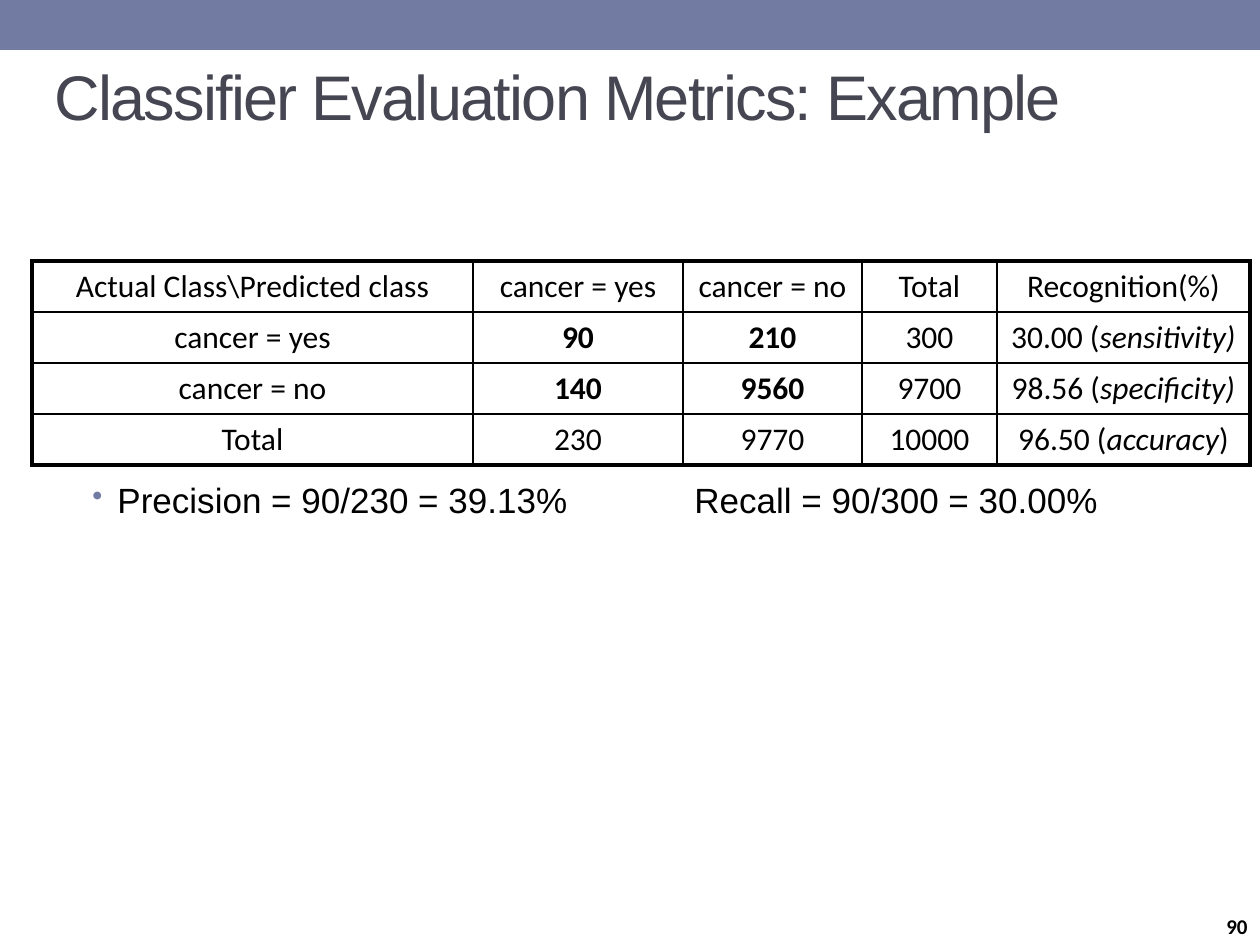
"""Build the classifier evaluation metrics slide with its confusion matrix."""
from lxml import etree
from pptx import Presentation
from pptx.dml.color import RGBColor
from pptx.enum.shapes import MSO_SHAPE
from pptx.enum.text import MSO_ANCHOR, PP_ALIGN
from pptx.oxml.ns import qn
from pptx.util import Pt

RECT = MSO_SHAPE.RECTANGLE
TOP, MIDDLE, BOTTOM = MSO_ANCHOR.TOP, MSO_ANCHOR.MIDDLE, MSO_ANCHOR.BOTTOM
LEFT, CENTER, RIGHT = PP_ALIGN.LEFT, PP_ALIGN.CENTER, PP_ALIGN.RIGHT
PX = 914400 / 126


class Theme:
    bar, title, ink = "727CA3", "464653", "000000"
    head, body, cell, page = 36, 20, 18, 12
    sans, grid = "Arial", "Calibri"
    thin, thick = 1, 2.25


def px(*sizes):
    return [round(size * PX) for size in sizes]


def style(par, face, size, color, align, bold=False):
    font = par.font
    font.name, font.size, font.bold = face, Pt(size), bold
    font.color.rgb = RGBColor.from_string(color)
    par.alignment = align


deck = Presentation()
deck.slide_width, deck.slide_height = px(1260, 945)
slide = deck.slides.add_slide(deck.slide_layouts[6])
shapes = slide.shapes

bar = shapes.add_shape(RECT, *px(0, 0, 1260, 50))
bar.shadow.inherit = False
bar.fill.solid()
bar.fill.fore_color.rgb = RGBColor.from_string(Theme.bar)
bar.line.fill.background()

texts = [
    ("Classifier Evaluation Metrics: Example", (42, 53, 1158, 84), MIDDLE,
     (Theme.sans, Theme.head, Theme.title, LEFT)),
    ("Precision = 90/230 = 39.13%\tRecall = 90/300 = 30.00%", (42, 472, 1166, 58), TOP,
     (Theme.sans, Theme.body, Theme.ink, LEFT)),
    ("90", (998, 892, 262, 53), BOTTOM,
     (Theme.grid, Theme.page, Theme.ink, RIGHT, True)),
]
pars = []
for text, area, anchor, look in texts:
    frame = shapes.add_textbox(*px(*area)).text_frame
    frame.word_wrap = True
    frame.vertical_anchor = anchor
    par = frame.paragraphs[0]
    par.add_run().text = text
    style(par, *look)
    pars.append(par)

title, result, page = pars
title.runs[0].font._element.set("spc", "-100")

props = result._p.get_or_add_pPr()
indent, hang, stop = px(63, -25, 640)
props.set("marL", str(indent))
props.set("indent", str(hang))
marks = etree.Element(qn("a:pPr"))
color = etree.SubElement(marks, qn("a:buClr"))
etree.SubElement(color, qn("a:srgbClr"), val=Theme.bar)
etree.SubElement(marks, qn("a:buSzPct"), val="85000")
etree.SubElement(marks, qn("a:buChar"), char="•")
tabs = etree.SubElement(marks, qn("a:tabLst"))
etree.SubElement(tabs, qn("a:tab"), pos=str(stop), algn="l")
for place, mark in enumerate(list(marks)):
    props.insert(place, mark)

rows = [
    ["Actual Class\\Predicted class", "cancer = yes", "cancer = no", "Total", "Recognition(%)"],
    ["cancer = yes", "90", "210", "300", "30.00 (*sensitivity)"],
    ["cancer = no", "140", "9560", "9700", "98.56 (*specificity)"],
    ["Total", "230", "9770", "10000", "96.50 (*accuracy*)"],
]
wide = [441, 210, 179, 135, 253]
high = 51
last, end = len(rows) - 1, len(wide) - 1
area = px(32, 261, sum(wide), high * len(rows))
table = shapes.add_table(len(rows), len(wide), *area).table
table.first_row = table.horz_banding = False
for col, width in zip(table.columns, px(*wide)):
    col.width = width

for r, row in enumerate(rows):
    table.rows[r].height = px(high)[0]
    for c, text in enumerate(row):
        cell = table.cell(r, c)
        par = cell.text_frame.paragraphs[0]
        bold = r in (1, 2) and c in (1, 2)
        style(par, Theme.grid, Theme.cell, Theme.ink, CENTER, bold)
        for n, part in enumerate(text.split("*")):
            run = par.add_run()
            run.text = part
            if n == 1:
                run.font.italic = True
        edges = {"a:lnL": c == 0, "a:lnR": c == end, "a:lnT": r == 0, "a:lnB": r == last}
        box = cell._tc.get_or_add_tcPr()
        for tag, outer in edges.items():
            width = Pt(Theme.thick if outer else Theme.thin)
            line = etree.SubElement(box, qn(tag), w=str(width))
            fill = etree.SubElement(line, qn("a:solidFill"))
            etree.SubElement(fill, qn("a:srgbClr"), val=Theme.ink)
        cell.fill.background()

deck.save("out.pptx")
